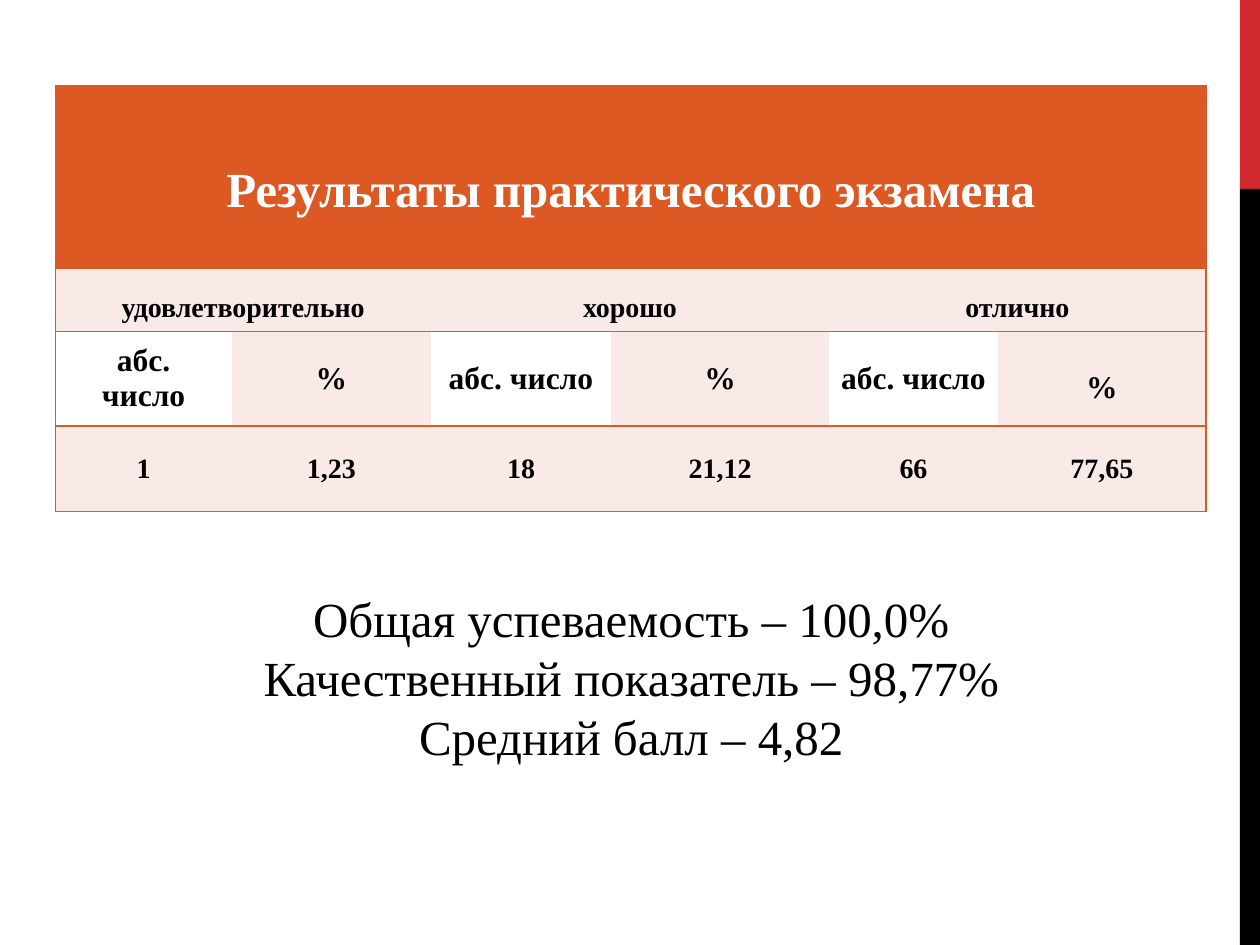
from lxml.etree import SubElement
from pptx import Presentation
from pptx.dml.color import RGBColor
from pptx.enum.shapes import MSO_SHAPE
from pptx.enum.text import MSO_ANCHOR, PP_ALIGN
from pptx.oxml.ns import qn
from pptx.util import Inches, Pt

RED = RGBColor(0xD1, 0x28, 0x2E)
BLACK = RGBColor(0, 0, 0)
WHITE = RGBColor(0xFF, 0xFF, 0xFF)
ORANGE = RGBColor(0xDC, 0x59, 0x24)
PINK = RGBColor(0xF9, 0xEA, 0xE8)
FONT = "Times New Roman"

COL_WIDTHS = [1.4, 1.58, 1.43, 1.73, 1.34, 1.65]
ROW_HEIGHTS = [1.45, 0.5, 0.75, 0.68]
GRADES = ["удовлетворительно", "хорошо", "отлично"]
HEADINGS = ["абс.\nчисло", "%", "абс. число", "%", "абс. число", "%"]
VALUES = ["1", "1,23", "18", "21,12", "66", "77,65"]
SUMMARY = "Общая успеваемость – 100,0%\nКачественный показатель – 98,77%\nСредний балл – 4,82"


def write_text(tf, text, size, color=BLACK, bold=False, spacing=None):
    """Write centred lines of text into a text frame."""
    for i, line in enumerate(text.split("\n")):
        p = tf.paragraphs[0] if i == 0 else tf.add_paragraph()
        p.alignment = PP_ALIGN.CENTER
        if spacing:
            p.line_spacing = spacing
        r = p.add_run()
        r.text = line
        r.font.name, r.font.size, r.font.bold = FONT, Pt(size), bold
        r.font.color.rgb = color


def set_borders(cell, sides):
    """Draw orange lines on the given sides of a cell and clear the others."""
    tcPr = cell._tc.get_or_add_tcPr()
    for side in "LRTB":
        ln = SubElement(tcPr, qn(f"a:ln{side}"), w=str(Pt(1)))
        if side in sides:
            fill = SubElement(ln, qn("a:solidFill"))
            SubElement(fill, qn("a:srgbClr"), val=str(ORANGE))
        else:
            SubElement(ln, qn("a:noFill"))


def style_cell(cell, fill, sides):
    """Set the margins, anchor, borders and fill of a cell."""
    cell.margin_left = cell.margin_right = Inches(0.07)
    cell.margin_top = cell.margin_bottom = 0
    cell.vertical_anchor = MSO_ANCHOR.MIDDLE
    set_borders(cell, sides)
    cell.fill.solid()
    cell.fill.fore_color.rgb = fill


def fill_row(table, row, texts, size, fills, color=BLACK, spacings=(None,)):
    """Fill a table row, merging cells so that the texts share it evenly."""
    cols = len(table.columns)
    span = cols // len(texts)
    for col in range(cols):
        first = col - col % span
        sides = "TB" + "L" * (col == 0) + "R" * (first + span == cols)
        style_cell(table.cell(row, col), fills[col % len(fills)], sides)
    for i, text in enumerate(texts):
        cell = table.cell(row, i * span)
        if span > 1:
            cell.merge(table.cell(row, (i + 1) * span - 1))
        write_text(cell.text_frame, text, size, color=color, bold=True,
                   spacing=spacings[i % len(spacings)])


def add_results(slide, left, top, width, height):
    """Add the table of exam results."""
    table = slide.shapes.add_table(len(ROW_HEIGHTS), len(COL_WIDTHS), left, top,
                                   width, height).table
    for column, size in zip(table.columns, COL_WIDTHS):
        column.width = Inches(size)
    for row, size in zip(table.rows, ROW_HEIGHTS):
        row.height = Inches(size)
    fill_row(table, 0, ["Результаты практического экзамена"], 28, [ORANGE],
             color=WHITE, spacings=[1.5])
    fill_row(table, 1, GRADES, 16, [PINK], spacings=[1.5])
    fill_row(table, 2, HEADINGS, 18, [WHITE, PINK], spacings=[None] * 5 + [1.5])
    fill_row(table, 3, VALUES, 16, [PINK])


def add_summary(slide, left, top, width, height):
    """Add the summary lines below the table."""
    tf = slide.shapes.add_textbox(left, top, width, height).text_frame
    tf.word_wrap = True
    write_text(tf, SUMMARY, 28)


def add_side_bar(slide, left, top, width, height):
    """Add the side bar, one fifth red and the rest black."""
    split = height // 5
    for y, h, color in [(top, split, RED), (top + split, height - split, BLACK)]:
        sp = slide.shapes.add_shape(MSO_SHAPE.RECTANGLE, left, y, width, h)
        sp.shadow.inherit = False
        sp.fill.solid()
        sp.fill.fore_color.rgb = color
        sp.line.fill.background()


def main():
    """Build and save the slide."""
    prs = Presentation()
    prs.slide_width, prs.slide_height = Inches(10), Inches(7.5)
    slide = prs.slides.add_slide(prs.slide_layouts[6])
    add_side_bar(slide, Inches(9.84), 0, Inches(0.16), prs.slide_height)
    add_results(slide, Inches(0.44), Inches(0.68), Inches(9.13), Inches(3.38))
    add_summary(slide, Inches(1.11), Inches(4.62), Inches(7.8), Inches(1.52))
    prs.save("out.pptx")


if __name__ == "__main__":
    main()
